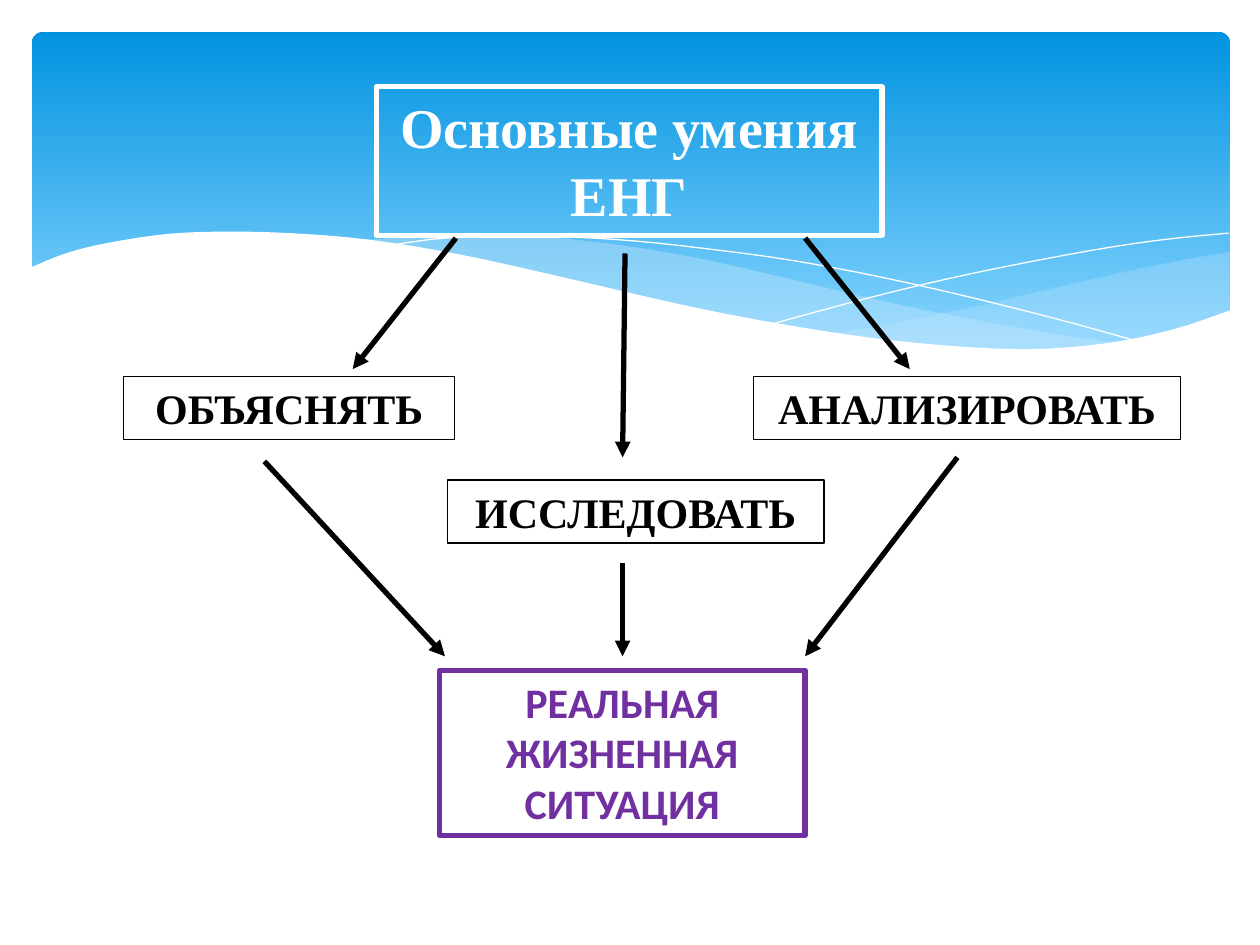
from lxml import etree
from pptx import Presentation, util as u
from pptx.dml import color
from pptx.enum import shapes, text
from pptx.oxml import ns

THEME = {
    "sky_top": "0293E0", "sky_bottom": "83D3FE", "mist": "C6E7FC",
    "white": "FFFFFF", "black": "000000", "purple": "7030A0",
    "serif": "Times New Roman", "sans": "Calibri",
    "title_size": 32, "body_size": 24, "thick": 3, "thin": 0.75,
}

# Content: all places are in centimetres
TITLE = ("Основные умения ЕНГ", (7.59, 1.75, 10.19, 3.0))
SKILLS = [
    ("ОБЪЯСНЯТЬ", (2.49, 7.59, 6.68, 1.27)),
    ("АНАЛИЗИРОВАТЬ", (15.19, 7.59, 8.61, 1.27)),
    ("ИССЛЕДОВАТЬ", (9.02, 9.68, 7.59, 1.27)),
]
SITUATION = ("РЕАЛЬНАЯ ЖИЗНЕННАЯ СИТУАЦИЯ", (8.86, 13.51, 7.37, 3.33))

ARROWS = [
    (9.19, 4.8, 7.11, 7.44), (12.6, 5.11, 12.55, 9.22), (16.23, 4.8, 18.34, 7.44),
    (5.33, 9.3, 8.97, 13.23), (12.55, 11.35, 12.55, 13.23), (19.3, 9.22, 16.23, 13.23),
]

# Header decoration: each edge is a smooth curve through its knots
SKY = (0.64, 0.64, 24.16, 6.86)
MISTS = [
    (29, [(24.79, 5.08), (23.75, 5.26), (21.87, 5.66), (19.79, 6.15), (17.93, 6.53),
          (16.79, 6.73)],
         [(16.79, 6.73), (17.91, 6.88), (19.23, 7.01), (20.68, 7.06), (22.15, 6.96),
          (23.39, 6.73), (24.79, 6.27)]),
    (40, [(22.68, 6.93), (21.26, 6.73), (19.69, 6.45), (17.93, 6.1), (15.98, 5.64),
          (14.1, 5.21), (12.42, 4.93), (10.67, 4.75), (9.17, 4.7), (7.26, 4.85)],
         [(7.26, 4.85), (9.19, 5.16), (11.4, 5.64), (13.46, 6.1), (15.7, 6.55),
          (17.65, 6.86), (19.33, 7.04), (20.78, 7.06), (21.77, 7.04), (22.68, 6.93)]),
]
RIPPLES = [
    [(7.85, 4.95), (8.97, 4.8), (10.57, 4.75), (12.42, 4.83), (14.12, 5.0),
     (16.15, 5.28), (18.47, 5.74), (21.11, 6.38), (23.04, 6.91)],
    [(15.57, 6.53), (17.65, 5.97), (19.71, 5.49), (22.0, 5.05), (23.47, 4.83),
     (24.77, 4.7)],
]
WAVE = [(24.82, 6.25), (23.62, 6.65), (22.23, 6.93), (20.55, 7.04), (18.44, 6.91),
        (16.46, 6.65), (14.1, 6.22), (11.35, 5.59), (9.27, 5.13), (7.42, 4.83),
        (5.84, 4.7), (4.5, 4.67), (3.35, 4.72), (2.16, 4.9), (1.32, 5.11), (0.58, 5.41)]
WAVE_FOOT = [(0.58, 8.36), (24.82, 8.36)]


def rgb(name):
    return color.RGBColor.from_string(THEME[name])


def place(box):
    return [u.Cm(v) for v in box]


def smooth(knots, steps=4):
    """Return points on a Catmull-Rom curve through the knots."""
    ends = [knots[0], *knots, knots[-1]]
    points = [knots[0]]
    for a, b, c, d in zip(ends, ends[1:], ends[2:], ends[3:]):
        for t in (i / steps for i in range(1, steps + 1)):
            points.append(tuple(
                (2 * q + (r - p) * t + (2 * p - 5 * q + 4 * r - s) * t ** 2
                 + (3 * q - p - 3 * r + s) * t ** 3) / 2
                for p, q, r, s in zip(a, b, c, d)))
    return points


def add_outline(slide, points, fill=None, alpha=None, line=None):
    (x, y), *rest = [(u.Cm(px), u.Cm(py)) for px, py in points]
    builder = slide.shapes.build_freeform(x, y, scale=1.0)
    builder.add_line_segments(rest, close=fill is not None)
    outline = builder.convert_to_shape()
    outline.shadow.inherit = False
    if fill:
        outline.fill.solid()
        outline.fill.fore_color.rgb = rgb(fill)
    else:
        outline.fill.background()
    if alpha:
        tint = outline.fill._xPr.find(".//" + ns.qn("a:srgbClr"))
        etree.SubElement(tint, ns.qn("a:alpha"), val=str(alpha * 1000))
    if line:
        outline.line.color.rgb = rgb(line)
        outline.line.width = u.Pt(0)
    else:
        outline.line.fill.background()


def add_text(slide, words, box, font="serif", size="body_size", ink="black", border="thin"):
    label = slide.shapes.add_textbox(*place(box))
    label.line.color.rgb = rgb(ink)
    label.line.width = u.Pt(THEME[border])
    frame = label.text_frame
    frame.word_wrap = True
    frame.auto_size = text.MSO_AUTO_SIZE.SHAPE_TO_FIT_TEXT
    paragraph = frame.paragraphs[0]
    paragraph.alignment = text.PP_ALIGN.CENTER
    run = paragraph.add_run()
    run.text = words
    run.font.name = THEME[font]
    run.font.size = u.Pt(THEME[size])
    run.font.bold = True
    run.font.color.rgb = rgb(ink)


def add_arrow(slide, ends):
    arrow = slide.shapes.add_connector(shapes.MSO_CONNECTOR.STRAIGHT, *place(ends))
    arrow.line.color.rgb = rgb("black")
    arrow.line.width = u.Pt(THEME["thick"])
    etree.SubElement(arrow.line._get_or_add_ln(), ns.qn("a:tailEnd"), type="triangle")
    etree.SubElement(arrow._element.spPr, ns.qn("a:effectLst"))


def add_header(slide):
    sky = slide.shapes.add_shape(shapes.MSO_SHAPE.ROUNDED_RECTANGLE, *place(SKY))
    sky.adjustments[0] = 0.034
    sky.shadow.inherit = False
    sky.line.fill.background()
    sky.fill.gradient()
    sky.fill.gradient_angle = 270
    stops = [(0, "sky_top"), (0.9, "sky_bottom")]
    for stop, (position, shade) in zip(sky.fill.gradient_stops, stops):
        stop.position = position
        stop.color.rgb = rgb(shade)
    for alpha, upper, lower in MISTS:
        add_outline(slide, smooth(upper) + smooth(lower)[1:], fill="mist", alpha=alpha)
    for ripple in RIPPLES:
        add_outline(slide, smooth(ripple), line="white")
    add_outline(slide, smooth(WAVE) + WAVE_FOOT, fill="white")


def main():
    deck = Presentation()
    deck.slide_width, deck.slide_height = u.Cm(25.4), u.Cm(19.05)
    slide = deck.slides.add_slide(deck.slide_layouts[6])
    add_header(slide)
    # Title, the three skills and the situation they lead to
    add_text(slide, *TITLE, size="title_size", ink="white", border="thick")
    for words, box in SKILLS:
        add_text(slide, words, box)
    add_text(slide, *SITUATION, font="sans", ink="purple", border="thick")
    # Arrows from title to skills to situation
    for ends in ARROWS:
        add_arrow(slide, ends)
    deck.save("out.pptx")


if __name__ == "__main__":
    main()
